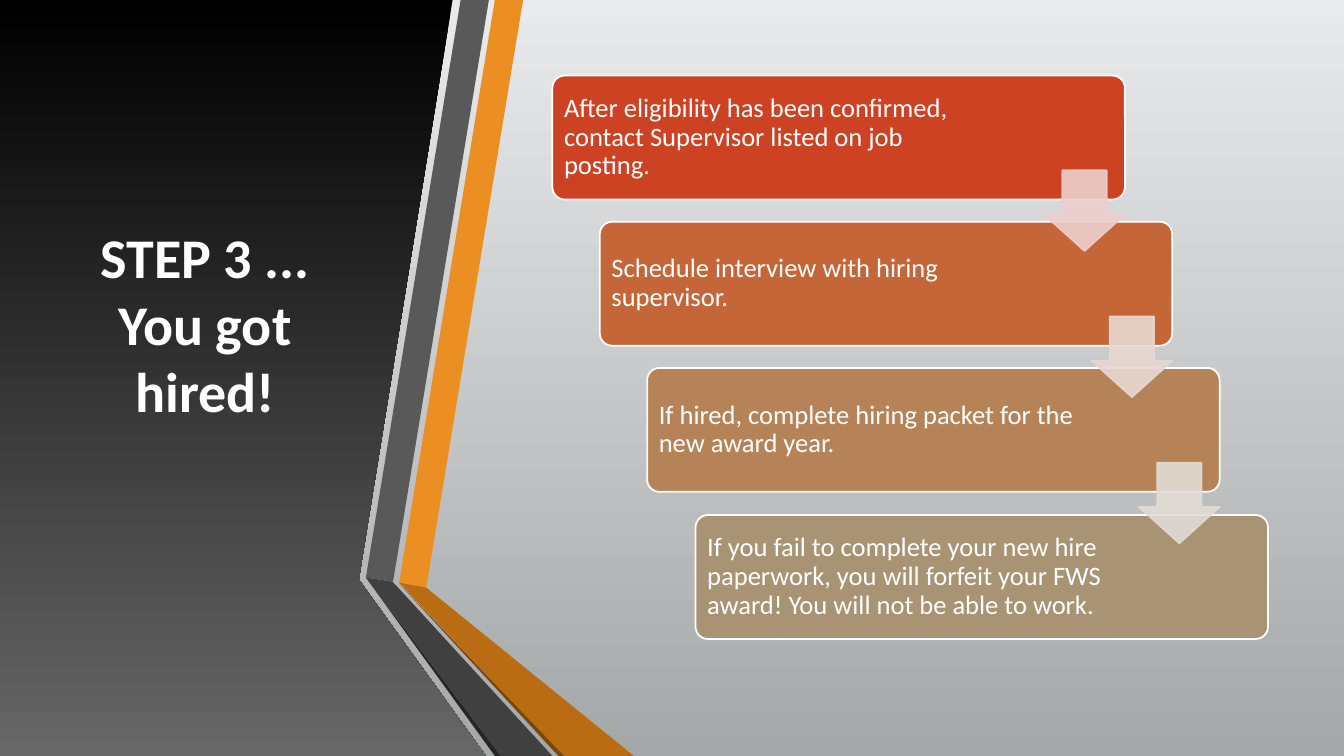
from pptx import Presentation
from pptx.dml.color import RGBColor
from pptx.enum.shapes import MSO_SHAPE
from pptx.enum.text import MSO_ANCHOR, MSO_AUTO_SIZE, PP_ALIGN
from pptx.oxml.xmlchemy import OxmlElement
from pptx.util import Pt

PX = 9144
WHITE = RGBColor(0xFF, 0xFF, 0xFF)
BLACK = RGBColor(0x00, 0x00, 0x00)
SMOKE = RGBColor(0x67, 0x67, 0x67)
MIST = RGBColor(0xE9, 0xEA, 0xEB)
STEEL = RGBColor(0xA5, 0xA8, 0xA9)
ORANGE = RGBColor(0xEB, 0x8F, 0x22)
OCHRE = RGBColor(0xB9, 0x6C, 0x11)
BROWN = RGBColor(0x7B, 0x48, 0x0B)
GRAPHITE = RGBColor(0x59, 0x59, 0x59)
CHARCOAL = RGBColor(0x40, 0x40, 0x40)
COAL = RGBColor(0x26, 0x26, 0x26)

PANEL = [(0, 0), (449, 0), (356, 575), (482, 750), (0, 750)]
RIBBONS = [
    (ORANGE, [(396, 578), (423, 583), (519, 0), (491, 0)]),
    (GRAPHITE, [(485, 0), (457, 0), (363, 573), (390, 577)]),
    (COAL, [(363, 573), (491, 750), (497, 750)]),
    (BROWN, [(396, 579), (554, 750), (560, 750)]),
    (OCHRE, [(396, 578), (560, 750), (629, 750), (423, 583)]),
    (CHARCOAL, [(363, 573), (497, 750), (548, 750), (395, 583), (389, 577)]),
]
STEPS = [
    ("After eligibility has been confirmed, contact Supervisor listed on job posting.",
     RGBColor(0xCD, 0x42, 0x23), RGBColor(0xED, 0xCF, 0xCD)),
    ("Schedule interview with hiring supervisor.",
     RGBColor(0xC5, 0x66, 0x39), RGBColor(0xE7, 0xD8, 0xD1)),
    ("If hired, complete hiring packet for the new award year.",
     RGBColor(0xB6, 0x83, 0x58), RGBColor(0xE2, 0xDC, 0xD6)),
    ("If you fail to complete your new hire paperwork, you will forfeit your FWS award! "
     "You will not be able to work.",
     RGBColor(0xA8, 0x93, 0x74), None),
]


class StepSlide:
    """Draws the elements of the hiring-step slide in one shared style."""

    font_name = "Calibri"
    line_width = Pt(1.25)

    def __init__(self, slide):
        self.slide = slide
        self.shapes = slide.shapes

    def gradient(self, fill, top, bottom):
        fill.gradient()
        fill.gradient_angle = 270
        for stop, color in zip(fill.gradient_stops, (top, bottom)):
            stop.color.rgb = color

    def outline(self, points):
        builder = self.shapes.build_freeform(*points[0], scale=PX)
        builder.add_line_segments(points[1:], close=True)
        outline = builder.convert_to_shape()
        outline.shadow.inherit = False
        outline.line.fill.background()
        return outline

    def panel(self, points, top, bottom):
        self.gradient(self.outline(points).fill, top, bottom)

    def ribbon(self, points, color):
        fill = self.outline(points).fill
        fill.solid()
        fill.fore_color.rgb = color

    def preset(self, kind, box, adjustments, color, line_color):
        preset = self.shapes.add_shape(kind, *(length * PX for length in box))
        for index, value in enumerate(adjustments):
            preset.adjustments[index] = value
        preset.shadow.inherit = False
        preset.fill.solid()
        preset.fill.fore_color.rgb = color
        preset.line.color.rgb = line_color
        preset.line.width = self.line_width
        return preset

    def set_text(self, frame, text, margins, size, bold, align, spacing):
        frame.text = text
        left, top, right, bottom = (margin * PX for margin in margins)
        frame_format = {
            "word_wrap": True, "auto_size": MSO_AUTO_SIZE.NONE,
            "vertical_anchor": MSO_ANCHOR.MIDDLE,
            "margin_left": left, "margin_top": top,
            "margin_right": right, "margin_bottom": bottom,
        }
        for name, value in frame_format.items():
            setattr(frame, name, value)
        paragraph = frame.paragraphs[0]
        for name, value in {"alignment": align, "line_spacing": spacing}.items():
            setattr(paragraph, name, value)
        font_format = {"name": self.font_name, "size": Pt(size), "bold": bold}
        for run in paragraph.runs:
            for name, value in font_format.items():
                setattr(run.font, name, value)
            run.font.color.rgb = WHITE

    def title(self, text, box):
        title = self.shapes.title
        for name, length in zip(("left", "top", "width", "height"), box):
            setattr(title, name, length * PX)
        title.element.getparent().append(title.element)
        self.set_text(title.text_frame, text, (10, 5, 10, 72), 40, True, PP_ALIGN.CENTER, 1.0)

    def card(self, text, box, color):
        card = self.preset(MSO_SHAPE.ROUNDED_RECTANGLE, box, [0.1], color, WHITE)
        self.set_text(card.text_frame, text, (8, 8, 135, 8), 19, False, PP_ALIGN.LEFT, 0.9)

    def arrow(self, box, color):
        arrow = self.preset(MSO_SHAPE.DOWN_ARROW, box, [0.55, 0.45], color, color)
        for tint in arrow.element.spPr.iter("{*}srgbClr"):
            alpha = OxmlElement("a:alpha")
            alpha.set("val", "90000")
            tint.append(alpha)


def main():
    deck = Presentation()
    deck.slide_width, deck.slide_height = 12192000, 750 * PX
    page = StepSlide(deck.slides.add_slide(deck.slide_layouts[5]))
    page.gradient(page.slide.background.fill, MIST, STEEL)
    page.panel(PANEL, BLACK, SMOKE)
    page.title("STEP 3 ...\vYou got hired!", (59, 75, 289, 558))
    for color, points in RIBBONS:
        page.ribbon(points, color)

    corners = [(548 + 142 * i // 3, 75 + 436 * i // 3) for i in range(len(STEPS))]
    for (left, top), (text, color, _) in zip(corners, STEPS):
        page.card(text, (left, top, 568, 123), color)
    for (left, top), (_, _, tint) in zip(corners[:-1], STEPS):
        page.arrow((left + 488, top + 94, 80, 80), tint)
    deck.save("out.pptx")


if __name__ == "__main__":
    main()
